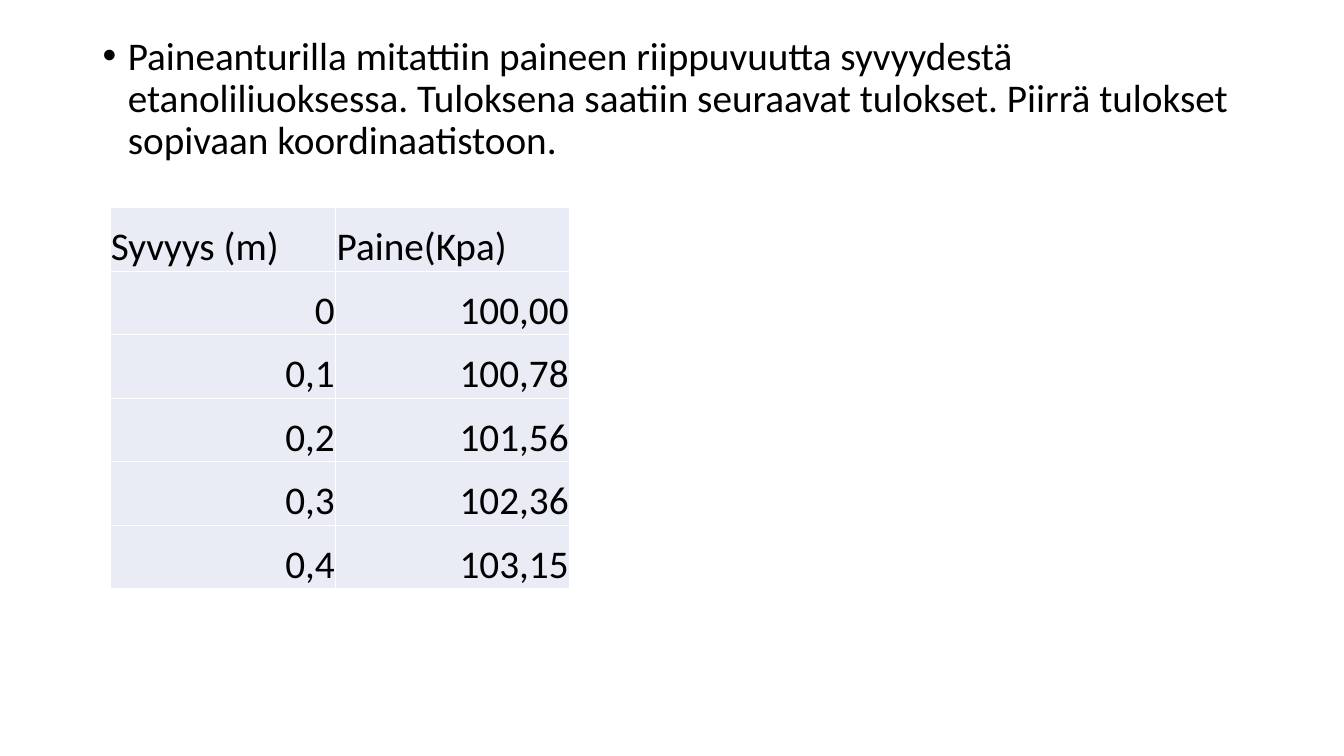
"""Build a slide with a measuring task and its table of depth and pressure."""
from dataclasses import dataclass

from lxml.etree import SubElement
from pptx import Presentation
from pptx.dml.color import RGBColor
from pptx.enum.text import MSO_ANCHOR, PP_ALIGN
from pptx.oxml import parse_xml
from pptx.oxml.ns import nsdecls, qn
from pptx.util import Pt


@dataclass
class Theme:
    face: str = "Calibri"
    size: int = 28
    ink: str = "000000"
    cell: str = "E9EBF5"
    rule: str = "FFFFFF"


theme = Theme()
PX = 9144


def style(para):
    para.font.name = theme.face
    para.font.size = Pt(theme.size)
    para.font.color.rgb = RGBColor.from_string(theme.ink)


deck = Presentation()
deck.slide_width, deck.slide_height = 1333 * PX, 750 * PX
slide = deck.slides.add_slide(deck.slide_layouts[6])

task = slide.shapes.add_textbox(92 * PX, 31 * PX, 1150 * PX, 644 * PX)
task.text_frame.word_wrap = True
para = task.text_frame.paragraphs[0]
para.text = (
    "Paineanturilla mitattiin paineen riippuvuutta syvyydestä etanoliliuoksessa. "
    "Tuloksena saatiin seuraavat tulokset. Piirrä tulokset sopivaan koordinaatistoon."
)
para.line_spacing = 0.9
props = para._p.get_or_add_pPr()
props.set("marL", str(25 * PX))
props.set("indent", str(-25 * PX))
SubElement(props, qn("a:buFont"), typeface="Arial")
SubElement(props, qn("a:buChar"), char="•")
style(para)

rows = [
    ("Syvyys (m)", "Paine(Kpa)"),
    ("0", "100,00"),
    ("0,1", "100,78"),
    ("0,2", "101,56"),
    ("0,3", "102,36"),
    ("0,4", "103,15"),
]
widths = [224, 232]
high = 63
frame = slide.shapes.add_table(
    len(rows), len(widths), 109 * PX, 206 * PX, sum(widths) * PX, len(rows) * high * PX
)
table = frame.table
for col, width in zip(table.columns, widths):
    col.width = width * PX
for r, row in enumerate(rows):
    table.rows[r].height = high * PX
    for c, text in enumerate(row):
        cell = table.cell(r, c)
        cell.text = text
        cell.vertical_anchor = MSO_ANCHOR.BOTTOM
        cell.margin_left = cell.margin_right = cell.margin_top = PX
        cell.margin_bottom = 0
        for side in "LRTB":
            cell._tc.get_or_add_tcPr().append(parse_xml(
                f'<a:ln{side} {nsdecls("a")} w="{Pt(1)}"><a:solidFill>'
                f'<a:srgbClr val="{theme.rule}"/></a:solidFill></a:ln{side}>'
            ))
        cell.fill.solid()
        cell.fill.fore_color.rgb = RGBColor.from_string(theme.cell)
        para = cell.text_frame.paragraphs[0]
        para.alignment = PP_ALIGN.RIGHT if r else PP_ALIGN.LEFT
        style(para)
        para.font.bold = False

deck.save("out.pptx")
